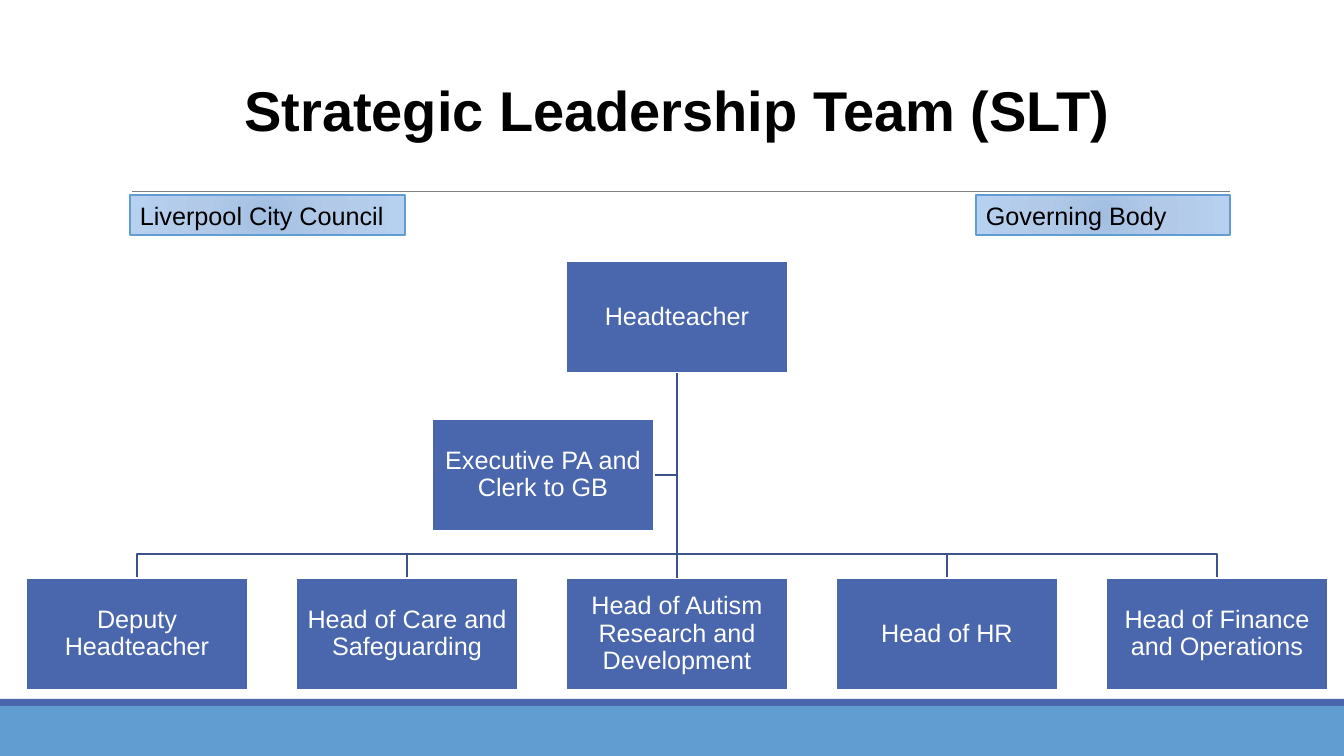
from dataclasses import dataclass

import pptx
import pptx.dml.color
import pptx.enum.shapes
import pptx.enum.text
import pptx.oxml
import pptx.oxml.ns
import pptx.util

EMU_PER_PX = 914400 / 100.8
PAGE_WIDTH, PAGE_HEIGHT = 1344, 756

# Organisation chart grid, in px
BOX_WIDTH, BOX_HEIGHT = 222, 112
FIRST_LEFT, COLUMN_STEP = 26, 270
HEAD_TOP, ASSISTANT_TOP, REPORT_TOP = 261, 419, 578
ASSISTANT_LEFT = 432
BUS_Y = 554
REPORTS = [
    "Deputy Headteacher",
    "Head of Care and Safeguarding",
    "Head of Autism Research and Development",
    "Head of HR",
    "Head of Finance and Operations",
]
MIDDLE = len(REPORTS) // 2

ALIGN = pptx.enum.text.PP_ALIGN
ANCHOR = pptx.enum.text.MSO_ANCHOR


@dataclass(frozen=True)
class Theme:
    font: str = "Arial"
    title_size: int = 40
    body_size: int = 18
    dark: str = "000000"
    light: str = "FFFFFF"
    box: str = "4A66AC"
    branch: str = "3B528A"
    band: str = "629DD1"
    rule: str = "808080"
    label_stops: tuple = ((0, "A2BFE2"), (45, "B2CAE8"), (100, "B6D0EF"))


THEME = Theme()


def px(length):
    return pptx.util.Emu(round(length * EMU_PER_PX))


def rgb(code):
    return pptx.dml.color.RGBColor.from_string(code)


def apply(target, values):
    for name, value in values.items():
        setattr(target, name, value)


def set_line(line, color, width):
    line.color.rgb = rgb(color)
    line.width = pptx.util.Pt(width)


def write(shape, text, color, size=THEME.body_size, bold=False, frame_format=None, para_format=None):
    frame = shape.text_frame
    apply(frame, {"word_wrap": True, "vertical_anchor": ANCHOR.TOP} | (frame_format or {}))
    para = frame.paragraphs[0]
    apply(para, {"alignment": ALIGN.LEFT} | (para_format or {}))
    span = para.add_run()
    span.text = text
    apply(span.font, {"name": THEME.font, "size": pptx.util.Pt(size), "bold": bold})
    span.font.color.rgb = rgb(color)


def add_rectangle(page, left, top, width, height, fill):
    kind = pptx.enum.shapes.MSO_SHAPE.RECTANGLE
    shape = page.shapes.add_shape(kind, px(left), px(top), px(width), px(height))
    shape.shadow.inherit = False
    shape.fill.solid()
    shape.fill.fore_color.rgb = rgb(fill)
    shape.line.fill.background()
    return shape


def add_line(page, start, end, color, width):
    kind = pptx.enum.shapes.MSO_CONNECTOR.STRAIGHT
    line = page.shapes.add_connector(kind, *map(px, start + end))
    set_line(line.line, color, width)
    properties = line._element.spPr
    properties.append(properties.makeelement(pptx.oxml.ns.qn("a:effectLst"), {}))
    return line


def add_branch(page, points):
    builder = page.shapes.build_freeform(*points[0], scale=EMU_PER_PX)
    builder.add_line_segments(points[1:], close=False)
    branch = builder.convert_to_shape()
    branch.shadow.inherit = False
    branch.fill.background()
    set_line(branch.line, THEME.branch, 1.25)


def add_role(page, left, top, text):
    box = add_rectangle(page, left, top, BOX_WIDTH, BOX_HEIGHT, THEME.box)
    set_line(box.line, THEME.light, 1.25)
    sides = ("margin_left", "margin_top", "margin_right", "margin_bottom")
    write(box, text, THEME.light,
          frame_format={"vertical_anchor": ANCHOR.MIDDLE} | dict.fromkeys(sides, px(1)),
          para_format={"alignment": ALIGN.CENTER, "line_spacing": 0.9})
    return box


def add_label(page, left, width, text):
    label = add_rectangle(page, left, 195, width, 40, THEME.band)
    set_line(label.line, THEME.band, 1)
    # Radial gradient spreading from the lower right corner
    stops = "".join(
        f'<a:gs pos="{place * 1000}"><a:srgbClr val="{color}"/></a:gs>'
        for place, color in THEME.label_stops)
    gradient = pptx.oxml.parse_xml(
        f'<a:gradFill {pptx.oxml.ns.nsdecls("a")}><a:gsLst>{stops}</a:gsLst>'
        '<a:path path="circle"><a:fillToRect l="100000" t="100000" r="100000" b="100000"/>'
        '</a:path></a:gradFill>')
    properties = label._element.spPr
    properties.replace(properties.find(pptx.oxml.ns.qn("a:solidFill")), gradient)
    write(label, text, THEME.dark)


def add_chart_tree(page):
    lefts = [FIRST_LEFT + COLUMN_STEP * column for column in range(len(REPORTS))]
    centers = [left + BOX_WIDTH // 2 for left in lefts]
    trunk_x, trunk_y = centers[MIDDLE], HEAD_TOP + BOX_HEIGHT
    assistant_y = ASSISTANT_TOP + BOX_HEIGHT // 2

    # Branches lie behind the boxes
    start = (trunk_x, trunk_y)
    add_branch(page, [start, (trunk_x, assistant_y), (ASSISTANT_LEFT + BOX_WIDTH, assistant_y)])
    for center in centers:
        if center != trunk_x:
            add_branch(page, [start, (trunk_x, BUS_Y), (center, BUS_Y), (center, REPORT_TOP)])

    # Roles
    head = add_role(page, lefts[MIDDLE], HEAD_TOP, "Headteacher")
    reports = [add_role(page, left, REPORT_TOP, text) for left, text in zip(lefts, REPORTS)]
    add_role(page, ASSISTANT_LEFT, ASSISTANT_TOP, "Executive PA and Clerk to GB")

    # Straight trunk down to the middle report
    trunk = add_line(page, start, (trunk_x, REPORT_TOP), THEME.branch, 1.25)
    trunk.begin_connect(head, 2)
    trunk.end_connect(reports[MIDDLE], 0)


def main():
    deck = pptx.Presentation()
    apply(deck, {"slide_width": px(PAGE_WIDTH), "slide_height": px(PAGE_HEIGHT)})
    page = deck.slides.add_slide(deck.slide_layouts[6])

    # Footer bands and title rule
    add_rectangle(page, 0, 706, PAGE_WIDTH, 50, THEME.band)
    add_rectangle(page, 0, 699, PAGE_WIDTH, 7, THEME.box)
    add_line(page, (132, 191), (1230, 191), THEME.rule, 0.5)

    # Title
    title = page.shapes.add_textbox(px(80), px(71), px(1194), px(78))
    write(title, "Strategic Leadership Team (SLT)", THEME.dark, THEME.title_size, True,
          para_format={"alignment": ALIGN.CENTER})

    # Organisation chart and the two oversight labels
    add_chart_tree(page)
    add_label(page, 976, 254, "Governing Body")
    add_label(page, 130, 275, "Liverpool City Council")

    deck.save("out.pptx")


if __name__ == "__main__":
    main()
